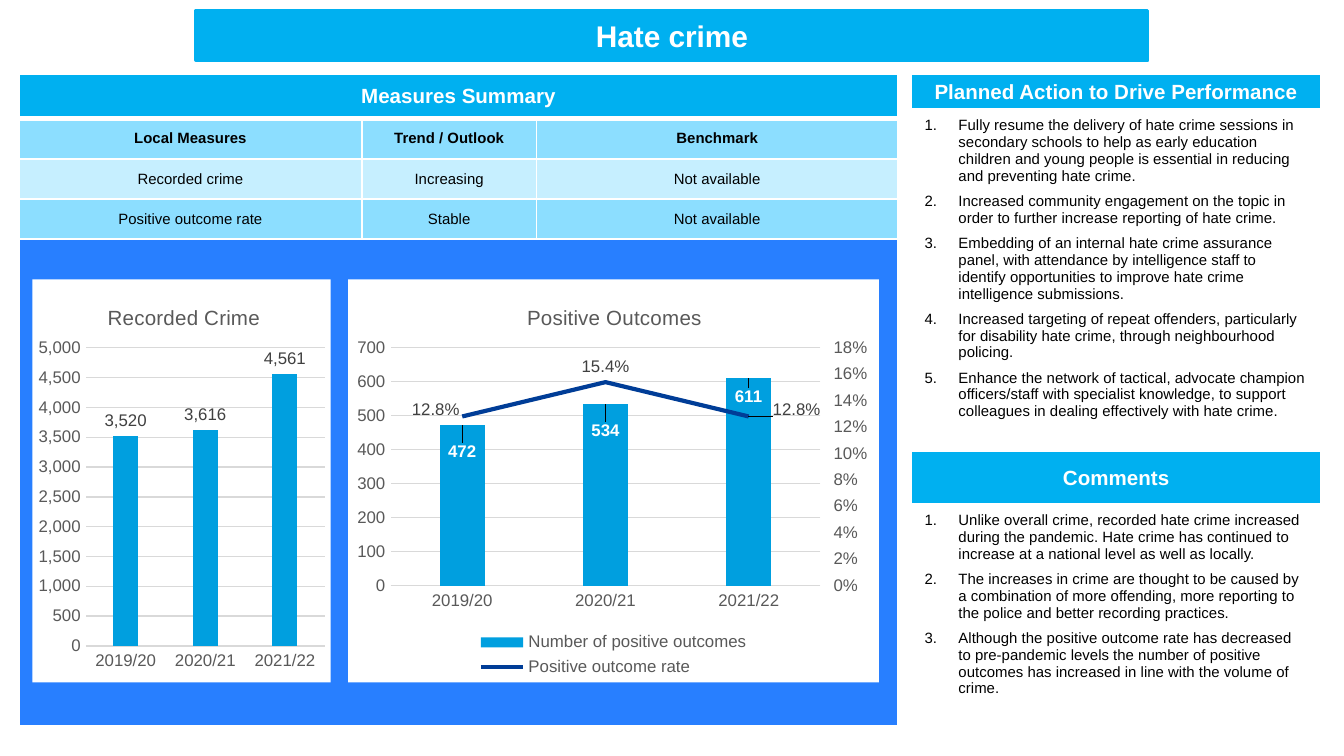
from typing import NamedTuple
from pptx import Presentation
from pptx import util as u
from pptx.chart import axis as ax, data as cd
from pptx.dml.color import RGBColor
from pptx.enum import chart as ch, shapes, text
from pptx.oxml import parse_xml
from pptx.oxml.ns import nsdecls, qn

class Theme(NamedTuple):
    font: str = "Arial"
    header: str = "00B0F0"
    panel: str = "287FFF"
    mid: str = "8CDEFF"
    pale: str = "C6EFFF"
    white: str = "FFFFFF"
    black: str = "000000"
    bar: str = "009FDF"
    line: str = "003D97"
    grid: str = "D9D9D9"
    axis: str = "595959"
    label: str = "404040"
    title_pt: int = 16
    head_pt: int = 11
    body_pt: int = 8
    chart_pt: int = 9

class ListPanel(NamedTuple):
    heading: str
    top: float
    heights: tuple
    items: tuple

class ChartSpec(NamedTuple):
    title: str
    left: float
    width: float
    title_x: float
    plot_at: tuple
    name: str
    values: tuple
    maximum: int
    unit: int
    rate: tuple = ()

T = Theme()

def rgb(code: str) -> RGBColor:
    return RGBColor.from_string(code)

def style(font, size: float, color: str, bold: bool = False) -> None:
    font.name, font.size, font.bold = T.font, u.Pt(size), bold
    font.color.rgb = rgb(color)

def fill(target, color: str) -> None:
    target.fill.solid()
    target.fill.fore_color.rgb = rgb(color)

def paint(cell, color: str, top: int = 1, bottom: int = 1) -> None:
    fill(cell, color)
    for i, (side, pt) in enumerate((("L", 1), ("R", 1), ("T", top), ("B", bottom))):
        cell._tc.get_or_add_tcPr().insert(i, parse_xml(
            f'<a:ln{side} {nsdecls("a")} w="{u.Pt(pt)}"><a:solidFill>'
            f'<a:srgbClr val="{T.white}"/></a:solidFill></a:ln{side}>'))

def write(tf, words: str, size: float, color: str, bold: bool = False) -> None:
    tf.vertical_anchor = text.MSO_ANCHOR.MIDDLE
    p = tf.paragraphs[0]
    p.text, p.alignment = words, text.PP_ALIGN.CENTER
    style(p.runs[0].font, size, color, bold)

def add_grid(s, x: float, y: float, cols: tuple, rows: tuple):
    box = (u.Cm(v) for v in (x, y, sum(cols), sum(rows)))
    tbl = s.shapes.add_table(len(rows), len(cols), *box).table
    tbl.first_row = tbl.horz_banding = False
    for col, w in zip(tbl.columns, cols):
        col.width = u.Cm(w)
    for row, h in zip(tbl.rows, rows):
        row.height = u.Cm(h)
    return tbl

def add_measures(s, rows: tuple) -> None:
    tbl = add_grid(s, 0.36, 1.4, (6.48, 3.3, 6.83), (0.84, 0.76, 0.76, 0.76, 9.19))
    for r, color, bottom in ((0, T.header, 3), (4, T.panel, 1)):
        tbl.cell(r, 0).merge(tbl.cell(r, 2))
        for c in range(3):
            paint(tbl.cell(r, c), color, bottom=bottom)
    write(tbl.cell(0, 0).text_frame, "Measures Summary", T.head_pt, T.white, True)
    for r, words in enumerate(rows, 1):
        for c, word in enumerate(words):
            paint(tbl.cell(r, c), T.mid if r % 2 else T.pale, top=3 if r == 1 else 1)
            write(tbl.cell(r, c).text_frame, word, T.body_pt, T.black, r == 1)
    for r in range(4):
        for c in range(3):
            tbl.cell(r, c).vertical_anchor = text.MSO_ANCHOR.MIDDLE

def add_list_panel(s, panel: ListPanel) -> None:
    tbl = add_grid(s, 17.22, panel.top, (7.75,), panel.heights)
    head, body = tbl.cell(0, 0), tbl.cell(1, 0)
    paint(head, T.header, bottom=3)
    write(head.text_frame, panel.heading, T.head_pt, T.white, True)
    head.vertical_anchor = text.MSO_ANCHOR.MIDDLE
    body.fill.background()
    body.text_frame.text = "\n".join(panel.items)
    for i, p in enumerate(body.text_frame.paragraphs):
        pPr = p._p.get_or_add_pPr()
        pPr.set("marL", str(u.Cm(0.64)))
        pPr.set("indent", str(-u.Cm(0.64)))
        pPr.append(parse_xml(f'<a:buAutoNum {nsdecls("a")} type="arabicPeriod"/>'))
        p.space_before = u.Pt(4.5 if i else 0)
        style(p.runs[0].font, T.body_pt, T.black)

def set_layout(parent, index: int, head: str = "", **pos: float) -> None:
    for old in parent.findall(qn("c:layout")):
        parent.remove(old)
    parts = head + "".join(f'<c:{k} val="{v}"/>' for k, v in pos.items())
    parent.insert(index, parse_xml(
        f'<c:layout {nsdecls("c")}><c:manualLayout>{parts}</c:manualLayout></c:layout>'))

def style_value_axis(axis, maximum: float, unit: float, fmt: str) -> None:
    axis.minimum_scale, axis.maximum_scale, axis.major_unit = 0, maximum, unit
    labels = axis.tick_labels
    labels.number_format, labels.number_format_is_linked = fmt, False
    axis.format.line.fill.background()
    style(labels.font, T.chart_pt, T.axis)

def label_series(ser, fmt: str, color: str, bold: bool, pos, shifts: tuple = ()) -> None:
    labels = ser.data_labels
    labels.show_value, labels.position = True, pos
    labels.number_format, labels.number_format_is_linked = fmt, False
    style(labels.font, T.chart_pt, color, bold)
    for i, (x, y) in enumerate(shifts):
        label = ser.points[i].data_label
        style(label.font, T.chart_pt, color, bold)
        label.position = pos
        dLbl = labels._element.findall(qn("c:dLbl"))[i]
        set_layout(dLbl, 1, x=x, y=y)
        dLbl.insert(2, parse_xml(
            f'<c:numFmt {nsdecls("c")} formatCode="{fmt}" sourceLinked="0"/>'))

def move_rate_to_right_axis(chart) -> None:
    area = chart._chartSpace.chart.plotArea
    bars = area.find(qn("c:barChart"))
    ser = bars.findall(qn("c:ser"))[1]
    for flag in ser.findall(qn("c:invertIfNegative")):
        ser.remove(flag)
    lines = parse_xml(
        f'<c:lineChart {nsdecls("c")}><c:grouping val="standard"/><c:varyColors val="0"/>'
        '<c:marker val="1"/><c:axId val="5001"/><c:axId val="5002"/></c:lineChart>')
    lines.insert(2, ser)
    bars.addnext(lines)
    cat, val = (parse_xml(
        f'<c:{tag} {nsdecls("c")}><c:axId val="{own}"/><c:scaling><c:orientation val="minMax"/>'
        f'</c:scaling><c:delete val="{hidden}"/><c:axPos val="{side}"/>'
        '<c:majorTickMark val="out"/><c:minorTickMark val="none"/><c:tickLblPos val="nextTo"/>'
        f'<c:crossAx val="{other}"/><c:crosses val="{cross}"/></c:{tag}>')
        for tag, own, other, hidden, side, cross in (
            ("catAx", 5001, 5002, 1, "b", "autoZero"), ("valAx", 5002, 5001, 0, "r", "max")))
    area.find(qn("c:valAx")).addnext(val)
    val.addnext(cat)
    style_value_axis(ax.ValueAxis(val), 0.18, 0.02, "0%")
    rate = chart.plots[1].series[0]
    rate.smooth, rate.marker.style = False, ch.XL_MARKER_STYLE.NONE
    rate.format.line.color.rgb, rate.format.line.width = rgb(T.line), u.Pt(2.25)
    label_series(rate, "0.0%", T.label, False, ch.XL_LABEL_POSITION.ABOVE,
                 ((-0.05, 0.02), (0, 0), (0.09, 0.02)))

def add_crime_chart(s, spec: ChartSpec) -> None:
    data = cd.CategoryChartData()
    data.categories = ["2019/20", "2020/21", "2021/22"]
    data.add_series(spec.name, spec.values, "#,##0")
    if spec.rate:
        data.add_series("Positive outcome rate", spec.rate, "0.0%")
    box = (u.Cm(v) for v in (spec.left, 5.28, spec.width, 7.62))
    chart = s.shapes.add_chart(ch.XL_CHART_TYPE.COLUMN_CLUSTERED, *box, data).chart
    style(chart.font, 10, T.black)
    space = chart._chartSpace
    space.chart.addnext(parse_xml(
        f'<c:spPr {nsdecls("c", "a")}><a:solidFill><a:srgbClr val="{T.white}"/></a:solidFill>'
        '<a:ln><a:noFill/></a:ln></c:spPr>'))
    p = chart.chart_title.text_frame.paragraphs[0]
    p.text = spec.title
    style(p.runs[0].font, T.head_pt, T.axis)
    edge = '<c:xMode val="edge"/><c:yMode val="edge"/>'
    set_layout(chart.chart_title._element, 1, edge, x=spec.title_x, y=0.05)
    set_layout(space.chart.plotArea, 0, '<c:layoutTarget val="inner"/>' + edge,
               **dict(zip("xywh", spec.plot_at)))
    cat, val = chart.category_axis, chart.value_axis
    cat.major_tick_mark = val.major_tick_mark = ch.XL_TICK_MARK.NONE
    for line in (cat.format.line, val.major_gridlines.format.line):
        line.color.rgb, line.width = rgb(T.grid), u.Pt(0.75)
    style(cat.tick_labels.font, T.chart_pt, T.axis)
    style_value_axis(val, spec.maximum, spec.unit, "#,##0")
    plot = chart.plots[0]
    plot.gap_width, plot.overlap, plot.vary_by_categories = 219, -27, False
    bars = plot.series[0]
    fill(bars.format, T.bar)
    chart.has_legend = bool(spec.rate)
    if not spec.rate:
        label_series(bars, "#,##0", T.label, False, ch.XL_LABEL_POSITION.OUTSIDE_END)
        return
    label_series(bars, "#,##0", T.white, True, ch.XL_LABEL_POSITION.INSIDE_END,
                 ((0, 0.03), (0, 0.03), (0, 0.01)))
    move_rate_to_right_axis(chart)
    chart.legend.position, chart.legend.include_in_layout = ch.XL_LEGEND_POSITION.BOTTOM, False
    style(chart.legend.font, T.chart_pt, T.axis)

def add_title(s, words: str) -> None:
    box = (u.Cm(v) for v in (3.71, 0.2, 17.98, 0.94))
    sp = s.shapes.add_shape(shapes.MSO_SHAPE.RECTANGLE, *box)
    sp.shadow.inherit = False
    fill(sp, T.header)
    sp.line.color.rgb, sp.line.width = rgb(T.header), u.Pt(2)
    tf = sp.text_frame
    tf.margin_left = tf.margin_right = tf.margin_top = tf.margin_bottom = 0
    write(tf, words, T.title_pt, T.white, True)

MEASURES = (("Local Measures", "Trend / Outlook", "Benchmark"),
            ("Recorded crime", "Increasing", "Not available"),
            ("Positive outcome rate", "Stable", "Not available"))
PANELS = (
    ListPanel("Planned Action to Drive Performance", 1.4, (0.66, 6.1), (
        "Fully resume the delivery of hate crime sessions in secondary schools to help as early education children and young people is essential in reducing and preventing hate crime.",
        "Increased community engagement on the topic in order to further increase reporting of hate crime.",
        "Embedding of an internal hate crime assurance panel, with attendance by intelligence staff to identify opportunities to improve hate crime intelligence submissions.",
        "Increased targeting of repeat offenders, particularly for disability hate crime, through neighbourhood policing.",
        "Enhance the network of tactical, advocate champion officers/staff with specialist knowledge, to support colleagues in dealing effectively with hate crime.")),
    ListPanel("Comments", 8.53, (1.02, 4.19), (
        "Unlike overall crime, recorded hate crime increased during the pandemic. Hate crime has continued to increase at a national level as well as locally.",
        "The increases in crime are thought to be caused by a combination of more offending, more reporting to the police and better recording practices.",
        "Although the positive outcome rate has decreased to pre-pandemic levels the number of positive outcomes has increased in line with the volume of crime.")))
CHARTS = (
    ChartSpec("Recorded Crime", 0.61, 5.64, 0.24, (0.18, 0.17, 0.8, 0.74),
              "Series 1", (3520, 3616, 4561), 5000, 500),
    ChartSpec("Positive Outcomes", 6.58, 10.03, 0.33, (0.08, 0.17, 0.81, 0.59),
              "Number of positive outcomes", (472, 534, 611), 700, 100, (0.128, 0.154, 0.128)))

prs = Presentation()
prs.slide_width, prs.slide_height = u.Cm(25.4), u.Cm(14.29)
s = prs.slides.add_slide(prs.slide_layouts[6])
add_measures(s, MEASURES)
add_title(s, "Hate crime")
for panel in PANELS:
    add_list_panel(s, panel)
for spec in CHARTS:
    add_crime_chart(s, spec)
prs.save("out.pptx")
